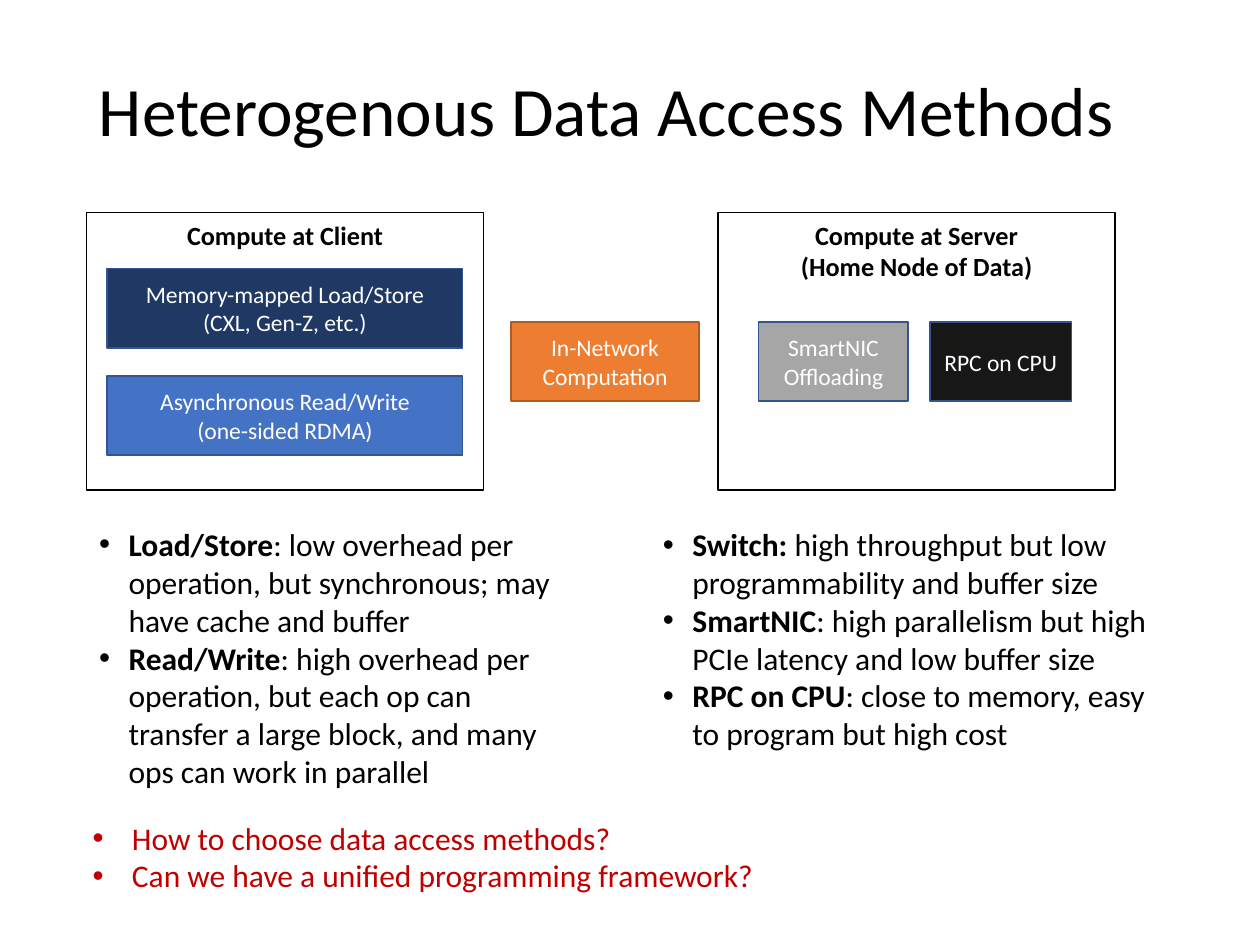
"""Build the slide on heterogenous data access methods."""
from lxml import etree
from pptx import Presentation
from pptx.dml.color import RGBColor
from pptx.enum.shapes import MSO_SHAPE
from pptx.enum.text import MSO_ANCHOR, PP_ALIGN
from pptx.oxml.ns import qn
from pptx.util import Pt

RECTANGLE = MSO_SHAPE.RECTANGLE
TOP, MIDDLE = MSO_ANCHOR.TOP, MSO_ANCHOR.MIDDLE
CENTER = PP_ALIGN.CENTER
FONT = "Calibri"
BLACK, WHITE, RED = "000000", "FFFFFF", "C00000"
BLUE_EDGE, ORANGE_EDGE = "325491", "AF5C24"


def color(hex_string):
    return RGBColor.from_string(hex_string)


def style(run, size, hex_string, bold=False):
    run.font.name = FONT
    run.font.size = Pt(size)
    run.font.bold = bold
    run.font.color.rgb = color(hex_string)


presentation = Presentation()
presentation.slide_width = Pt(720)
presentation.slide_height = Pt(540)
slide = presentation.slides.add_slide(presentation.slide_layouts[6])

title = slide.shapes.add_textbox(Pt(49.5), Pt(26), Pt(621), Pt(78.5))
title.text_frame.word_wrap = True
title.text_frame.vertical_anchor = MIDDLE
title.text_frame.text = "Heterogenous Data Access Methods"
title_paragraph = title.text_frame.paragraphs[0]
title_paragraph.line_spacing = 0.9
style(title_paragraph.runs[0], 39.6, BLACK)

panels = [
    (49.5, "Compute at Client"),
    (410.4, "Compute at Server\n(Home Node of Data)"),
]
methods = [
    (61.3, 153.4, 203, "203864", BLUE_EDGE, "Memory-mapped Load/Store\n(CXL, Gen-Z, etc.)"),
    (61.3, 214.7, 203, "4472C4", BLUE_EDGE, "Asynchronous Read/Write\n(one-sided RDMA)"),
    (433.5, 184, 85.6, "A6A6A6", BLUE_EDGE, "SmartNIC Offloading"),
    (292, 184, 107.5, "ED7D31", ORANGE_EDGE, "In-Network Computation"),
    (531.3, 184, 81, "181717", BLUE_EDGE, "RPC on CPU"),
]
boxes = [
    (left, 121.5, 226.8, 158.4, WHITE, BLACK, text, TOP, 15, BLACK, True)
    for left, text in panels
] + [
    (left, top, width, 45.4, fill, edge, text, MIDDLE, 13.5, WHITE, False)
    for left, top, width, fill, edge, text in methods
]
for left, top, width, height, fill, edge, text, anchor, size, ink, bold in boxes:
    shape = slide.shapes.add_shape(RECTANGLE, Pt(left), Pt(top), Pt(width), Pt(height))
    shape.shadow.inherit = False
    shape.fill.solid()
    shape.fill.fore_color.rgb = color(fill)
    shape.line.color.rgb = color(edge)
    shape.line.width = Pt(1)
    shape.text_frame.word_wrap = True
    shape.text_frame.vertical_anchor = anchor
    shape.text_frame.text = text
    for paragraph in shape.text_frame.paragraphs:
        paragraph.alignment = CENTER
        style(paragraph.runs[0], size, ink, bold)

bullet_lists = [
    (49.5, 296.6, 287.3, 160, 16.9, BLACK, [
        ("Load/Store", ": low overhead per operation, but synchronous; may have cache and buffer"),
        ("Read/Write", ": high overhead per operation, but each op can transfer a large block, "
                       "and many ops can work in parallel"),
    ]),
    (371.7, 296.6, 302.4, 138.2, 16.9, BLACK, [
        ("Switch: ", "high throughput but low programmability and buffer size"),
        ("SmartNIC", ": high parallelism but high PCIe latency and low buffer size"),
        ("RPC on CPU", ": close to memory, easy to program but high cost"),
    ]),
    (45.8, 464.2, 620.6, 51, 22.5, RED, [
        ("", "How to choose data access methods?"),
        ("", "Can we have a unified programming framework?"),
    ]),
]
for left, top, width, height, indent, ink, items in bullet_lists:
    text_box = slide.shapes.add_textbox(Pt(left), Pt(top), Pt(width), Pt(height))
    text_frame = text_box.text_frame
    text_frame.word_wrap = True
    text_frame.text = "\n".join(term for term, _ in items)
    for paragraph, (term, explanation) in zip(text_frame.paragraphs, items):
        properties = paragraph._p.get_or_add_pPr()
        properties.set("marL", str(Pt(indent)))
        properties.set("indent", str(-Pt(indent)))
        etree.SubElement(properties, qn("a:buFont")).set("typeface", "Arial")
        etree.SubElement(properties, qn("a:buChar")).set("char", "•")
        for run in paragraph.runs:
            style(run, 18, ink, True)
        run = paragraph.add_run()
        run.text = explanation
        style(run, 18, ink)

presentation.save("out.pptx")
